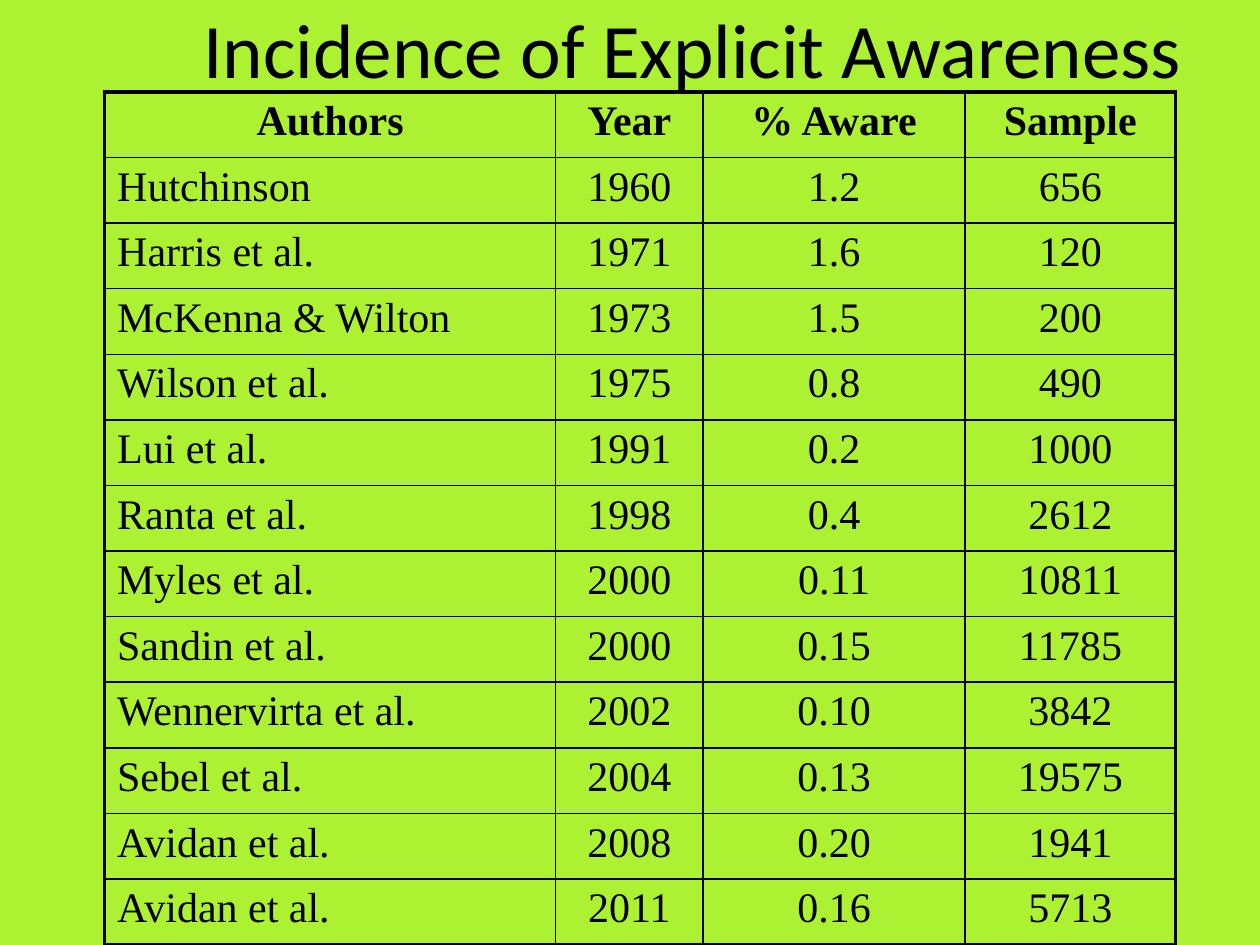
from lxml.etree import SubElement
from pptx import Presentation
from pptx.dml.color import RGBColor
from pptx.enum.text import MSO_ANCHOR as Anchor, PP_ALIGN as Align
from pptx.oxml.ns import qn
from pptx.util import Inches, Pt


def rgb(value):
    return RGBColor.from_string(value)


class Deck:
    ink, ground = "000000", "ADF232"
    title_font, table_font = "Calibri", "Times New Roman"
    thin, thick = 1, 2.25

    def __init__(self, width, height):
        self.prs = Presentation()
        self.prs.slide_width, self.prs.slide_height = Inches(width), Inches(height)

    def add_slide(self):
        self.s = self.prs.slides.add_slide(self.prs.slide_layouts[5])
        fill = self.s.background.fill
        fill.solid()
        fill.fore_color.rgb = rgb(self.ground)

    def format(self, p, font, size, align, bold=False):
        p.alignment = align
        for r in p.runs:
            r.font.name, r.font.size, r.font.bold = font, Pt(size), bold
            r.font.color.rgb = rgb(self.ink)

    def title(self, text, left, top, width, height):
        sp = self.s.shapes.title
        sp.left, sp.top = Inches(left), Inches(top)
        sp.width, sp.height = Inches(width), Inches(height)
        tf = sp.text_frame
        tf.text = text
        tf.vertical_anchor = Anchor.MIDDLE
        self.format(tf.paragraphs[0], self.title_font, 44, Align.CENTER)

    def borders(self, cell, outer_sides):
        tc_pr = cell._tc.get_or_add_tcPr()
        for side in "LRTB":
            weight = self.thick if side in outer_sides else self.thin
            ln = SubElement(tc_pr, qn("a:ln" + side), w=str(Pt(weight)))
            fill = SubElement(ln, qn("a:solidFill"))
            SubElement(fill, qn("a:srgbClr"), val=self.ink)

    def cell(self, cell, text, align, bold, outer_sides):
        cell.text = text
        p = cell.text_frame.paragraphs[0]
        # Space before as a share of the line
        space = SubElement(p._p.get_or_add_pPr(), qn("a:spcBef"))
        SubElement(space, qn("a:spcPct"), val="20000")
        self.format(p, self.table_font, 24, align, bold)
        self.borders(cell, outer_sides)
        cell.fill.background()

    def table(self, rows, col_widths, left, top, height):
        last_row, last_col = len(rows) - 1, len(col_widths) - 1
        table = self.s.shapes.add_table(
            len(rows), len(col_widths), Inches(left), Inches(top),
            Inches(sum(col_widths)), Inches(height)).table
        table.first_row = table.horz_banding = False
        for column, width in zip(table.columns, col_widths):
            column.width = Inches(width)
        for i, row in enumerate(rows):
            for j, text in enumerate(row):
                edges = {"L": j == 0, "R": j == last_col, "T": i == 0, "B": i == last_row}
                outer_sides = [side for side, outer in edges.items() if outer]
                align = Align.LEFT if i and j == 0 else Align.CENTER
                self.cell(table.cell(i, j), text, align, i == 0, outer_sides)


STUDIES = [
    ("Authors", "Year", "% Aware", "Sample"),
    ("Hutchinson", "1960", "1.2", "656"),
    ("Harris et al.", "1971", "1.6", "120"),
    ("McKenna & Wilton", "1973", "1.5", "200"),
    ("Wilson et al.", "1975", "0.8", "490"),
    ("Lui et al.", "1991", "0.2", "1000"),
    ("Ranta et al.", "1998", "0.4", "2612"),
    ("Myles et al.", "2000", "0.11", "10811"),
    ("Sandin et al.", "2000", "0.15", "11785"),
    ("Wennervirta et al.", "2002", "0.10", "3842"),
    ("Sebel et al.", "2004", "0.13", "19575"),
    ("Avidan et al.", "2008", "0.20", "1941"),
    ("Avidan et al.", "2011", "0.16", "5713"),
]


def main():
    deck = Deck(10, 7.5)
    deck.add_slide()
    # Heading
    deck.title("Incidence of Explicit Awareness", 1, -0.25, 9, 1.25)
    # Studies, one a row
    deck.table(STUDIES, [3.58, 1.17, 2.08, 1.67], 0.83, 0.73, 6.77)
    deck.prs.save("out.pptx")


if __name__ == "__main__":
    main()
